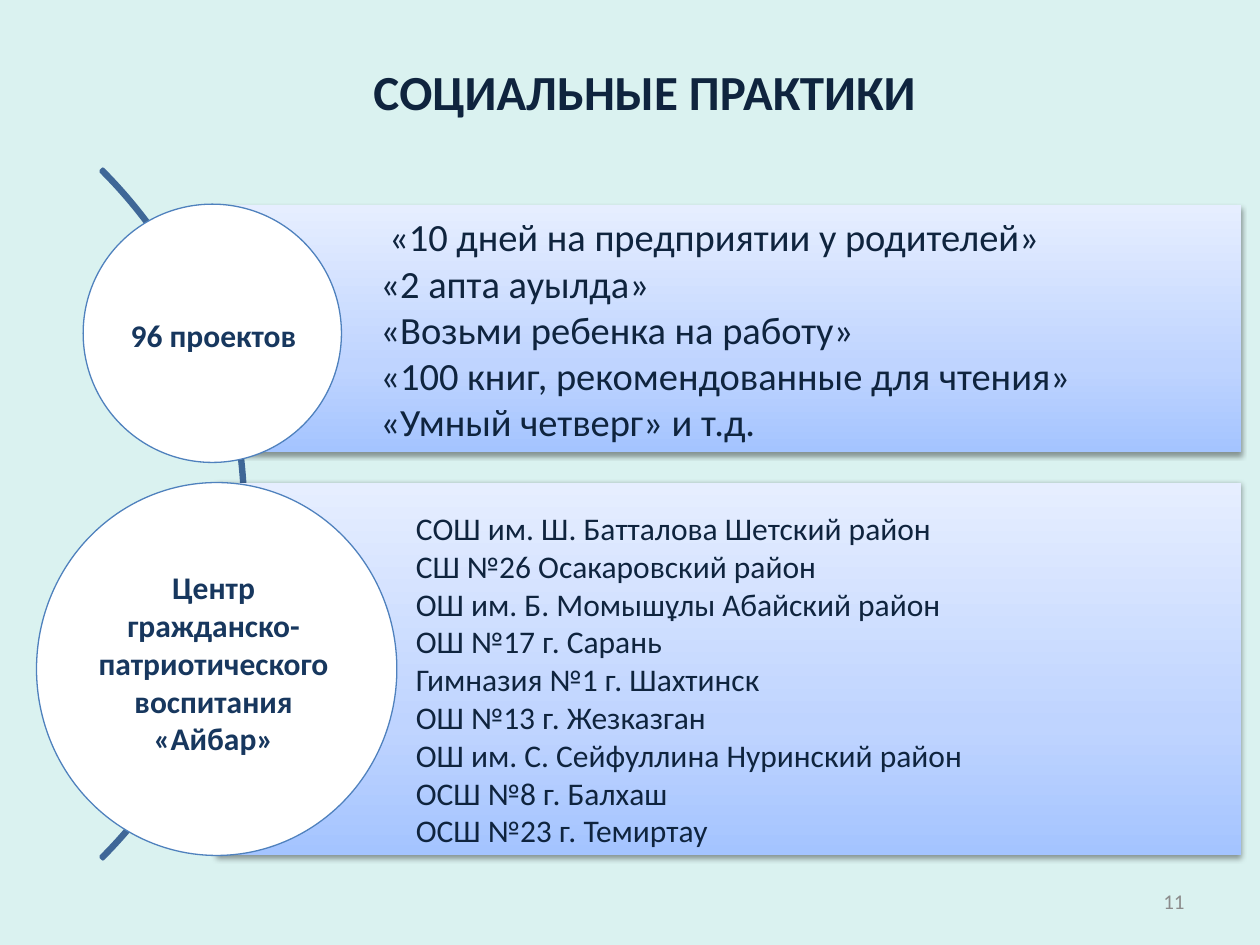
"""Build the slide on social practices: two circles on an arc, each with a panel of examples."""
from copy import deepcopy

from pptx import Presentation
from pptx.dml.color import RGBColor
from pptx.enum.shapes import MSO_SHAPE as SHP
from pptx.enum.text import MSO_ANCHOR as ANC, PP_ALIGN as AL
from pptx.oxml import parse_xml
from pptx.oxml.ns import nsdecls
from pptx.util import Inches, Pt

C = {"bg": "DAF2F0", "dark": "0F243E", "label": "17375E", "number": "8C8C8C",
     "arc": "3F6797", "ring": "4F81BD", "white": "FFFFFF", "shadow": "000000"}
GRADIENT = [(0, "A4C4FF"), (0.35, "BFD4FF"), (1, "E6EEFF")]
FONT = "Calibri"
PANEL_LEFT, PANEL_WIDTH = 1.72, 8.13

TITLE = "СОЦИАЛЬНЫЕ ПРАКТИКИ"
NUMBER = "11"
GROUPS = [
    {"top": 1.63, "height": 1.96, "inset": 1.3, "size": 22, "anchor": ANC.MIDDLE,
     "circle": (0.66, 1.62, 2.05, 2.05),
     "label": "96 проектов", "label_box": (0.83, 2.46, 1.73, 0.4),
     "lines": [" «10 дней на предприятии у родителей»",
               "«2 апта ауылда»",
               "«Возьми ребенка на работу»",
               "«100 книг, рекомендованные для чтения»",
               "«Умный четверг» и т.д."]},
    {"top": 3.83, "height": 2.96, "inset": 1.58, "size": 18, "anchor": ANC.BOTTOM,
     "circle": (0.29, 3.83, 2.86, 2.96),
     "label": "Центр гражданско-патриотического воспитания «Айбар»",
     "label_box": (0.67, 4.46, 2.05, 1.62),
     "lines": ["СОШ им. Ш. Батталова Шетский район",
               "СШ №26 Осакаровский район",
               "ОШ им. Б. Момышұлы Абайский район",
               "ОШ №17 г. Сарань",
               "Гимназия №1 г. Шахтинск",
               "ОШ №13 г. Жезказган",
               "ОШ им. С. Сейфуллина Нуринский район",
               "ОСШ №8 г. Балхаш",
               "ОСШ №23 г. Темиртау"]},
]


def rgb(name):
    return RGBColor.from_string(C[name])


def add_shape(s, kind, box, fill, line, width):
    sp = s.shapes.add_shape(kind, *map(Inches, box))
    sp.shadow.inherit = False
    sp.fill.solid()
    sp.fill.fore_color.rgb = rgb(fill)
    sp.line.color.rgb = rgb(line)
    sp.line.width = Pt(width)
    return sp


def write(sp, lines, size, color, bold=False, align=AL.LEFT, anchor=ANC.TOP, **margins):
    tf = sp.text_frame
    frame = {"word_wrap": True, "vertical_anchor": anchor}
    frame.update({f"margin_{side}": Inches(v) for side, v in margins.items()})
    for key, value in frame.items():
        setattr(tf, key, value)
    for i, line in enumerate(lines):
        p = tf.paragraphs[0] if i == 0 else tf.add_paragraph()
        p.alignment = align
        r = p.add_run()
        r.text = line
        for key, value in {"name": FONT, "size": Pt(size), "bold": bold}.items():
            setattr(r.font, key, value)
        r.font.color.rgb = rgb(color)


def add_text(s, box, text, size, color, **fmt):
    write(s.shapes.add_textbox(*map(Inches, box)), [text], size, color, **fmt)


def add_panel(s, group):
    box = (PANEL_LEFT, group["top"], PANEL_WIDTH, group["height"])
    sp = s.shapes.add_shape(SHP.RECTANGLE, *map(Inches, box))
    sp.line.fill.background()
    sp.fill.gradient()
    sp.fill.gradient_angle = 90
    stops = sp.fill.gradient_stops
    first = stops[0]._gs
    first.addnext(deepcopy(first))
    for stop, (position, color) in zip(sp.fill.gradient_stops, GRADIENT):
        stop.position = position
        stop.color.rgb = RGBColor.from_string(color)
    sp._element.spPr.append(parse_xml(
        f'<a:effectLst {nsdecls("a")}><a:outerShdw blurRad="{Pt(3.1)}" dist="{Pt(1.6)}" '
        f'dir="5400000" rotWithShape="0"><a:srgbClr val="{C["shadow"]}">'
        '<a:alpha val="38000"/></a:srgbClr></a:outerShdw></a:effectLst>'))
    write(sp, group["lines"], group["size"], "dark", anchor=group["anchor"],
          left=group["inset"], top=0.05, right=0.05, bottom=0.05)


def main():
    prs = Presentation()
    prs.slide_width, prs.slide_height = Inches(10), Inches(7.5)
    s = prs.slides.add_slide(prs.slide_layouts[6])
    s.background.fill.solid()
    s.background.fill.fore_color.rgb = rgb("bg")

    add_text(s, (0.43, 0.21, 9.37, 1.02), TITLE, 28, "dark",
             bold=True, align=AL.CENTER, anchor=ANC.MIDDLE)
    arc = add_shape(s, SHP.BLOCK_ARC, (-5.79, 0.21, 7.74, 7.74), "arc", "arc", 2)
    for i, value in enumerate((189, 27, 0.003)):
        arc.adjustments[i] = value

    for group in GROUPS:
        add_panel(s, group)
        add_shape(s, SHP.OVAL, group["circle"], "white", "ring", 0.75)
        add_text(s, group["label_box"], group["label"], 18, "label",
                 bold=True, align=AL.CENTER)
    add_text(s, (7.17, 6.95, 2.33, 0.4), NUMBER, 12, "number",
             align=AL.RIGHT, anchor=ANC.MIDDLE)
    prs.save("out.pptx")


if __name__ == "__main__":
    main()
